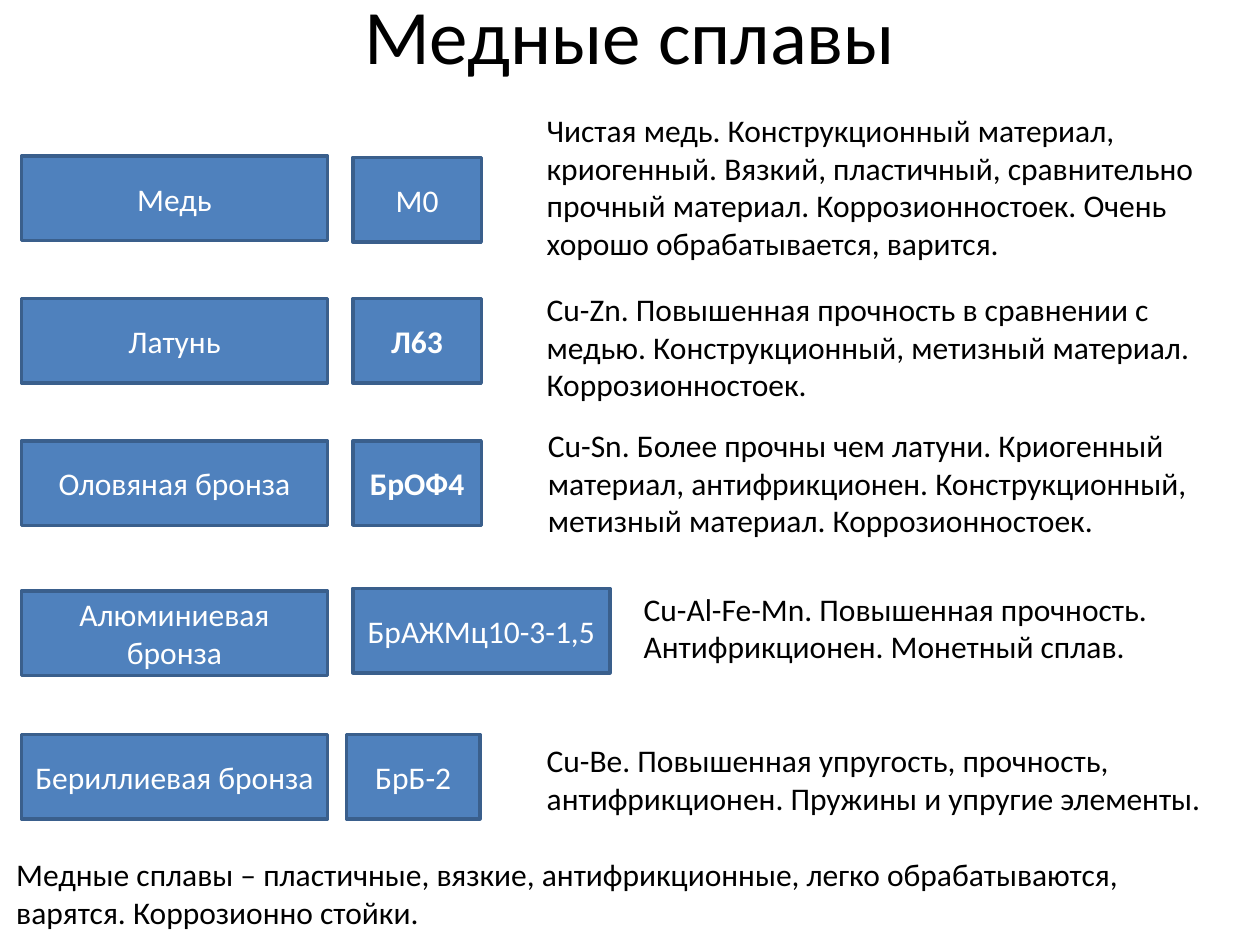
from pptx import Presentation
from pptx.dml.color import RGBColor
from pptx.enum.shapes import MSO_SHAPE
from pptx.enum.text import MSO_ANCHOR, PP_ALIGN
from pptx.util import Inches, Pt

RECT = MSO_SHAPE.RECTANGLE
MIDDLE = MSO_ANCHOR.MIDDLE
LEFT, CENTER = PP_ALIGN.LEFT, PP_ALIGN.CENTER
COLORS = {name: RGBColor.from_string(code) for name, code in {
    "text": "000000", "label": "FFFFFF", "fill": "4F81BD", "line": "3A5F8C",
}.items()}
BOX_H = 0.67

# name, name top, (grade, left, top, width, bold), (note, left, top, width, height)
ALLOYS = [
    ("Медь", 1.24, ("М0", 2.8, 1.25, 1.02, False),
     ("Чистая медь. Конструкционный материал, криогенный. Вязкий, пластичный, "
      "сравнительно прочный материал. Коррозионностоек. Очень хорошо "
      "обрабатывается, варится.", 4.24, 0.83, 5.71, 1.31)),
    ("Латунь", 2.37, ("Л63", 2.8, 2.37, 1.02, True),
     ("Cu-Zn. Повышенная прочность в сравнении с медью. Конструкционный, "
      "метизный материал. Коррозионностоек.", 4.24, 2.25, 5.7, 1.01)),
    ("Оловяная бронза", 3.5, ("БрОФ4", 2.8, 3.5, 1.02, True),
     ("Cu-Sn. Более прочны чем латуни. Криогенный материал, антифрикционен. "
      "Конструкционный, метизный материал. Коррозионностоек.",
      4.25, 3.33, 5.57, 1.01)),
    ("Алюминиевая бронза", 4.69, ("БрАЖМц10-3-1,5", 2.8, 4.67, 2.04, False),
     ("Cu-Al-Fe-Mn. Повышенная прочность. Антифрикционен. Монетный сплав.",
      5.01, 4.63, 4.82, 0.71)),
    ("Бериллиевая бронза", 5.83, ("БрБ-2", 2.75, 5.83, 1.06, False),
     ("Cu-Be. Повышенная упругость, прочность, антифрикционен. Пружины и "
      "упругие элементы.", 4.24, 5.83, 5.75, 0.71)),
]
SUMMARY = ("Медные сплавы – пластичные, вязкие, антифрикционные, легко "
           "обрабатываются, варятся. Коррозионно стойки.", 0.03, 6.74, 9.79, 0.71)


def write(shape, text, color="text", align=LEFT, size=18, bold=False):
    frame = shape.text_frame
    frame.word_wrap = True
    para = frame.paragraphs[0]
    para.alignment = align
    run = para.add_run()
    run.text = text
    style = {"name": "Calibri", "size": Pt(size), "bold": bold}
    for key, value in style.items():
        setattr(run.font, key, value)
    run.font.color.rgb = COLORS[color]


def add_box(text, left, top, width, bold=False):
    box = slide.shapes.add_shape(RECT, *map(Inches, (left, top, width, BOX_H)))
    box.shadow.inherit = False
    box.fill.solid()
    box.fill.fore_color.rgb = COLORS["fill"]
    box.line.color.rgb = COLORS["line"]
    box.line.width = Pt(2)
    box.text_frame.vertical_anchor = MIDDLE
    write(box, text, "label", CENTER, bold=bold)


prs = Presentation()
prs.slide_width, prs.slide_height = Inches(10), Inches(7.5)
slide = prs.slides.add_slide(prs.slide_layouts[5])

title = slide.shapes.title
place = {"left": 0.5, "top": -0.17, "width": 9, "height": 0.87}
for key, value in place.items():
    setattr(title, key, Inches(value))
title.text_frame.vertical_anchor = MIDDLE
write(title, "Медные сплавы", align=CENTER, size=44)

for name, top, grade, note in ALLOYS:
    add_box(name, 0.17, top, 2.43)
    add_box(*grade)

for text, *area in [alloy[-1] for alloy in ALLOYS] + [SUMMARY]:
    write(slide.shapes.add_textbox(*map(Inches, area)), text)

prs.save("out.pptx")
